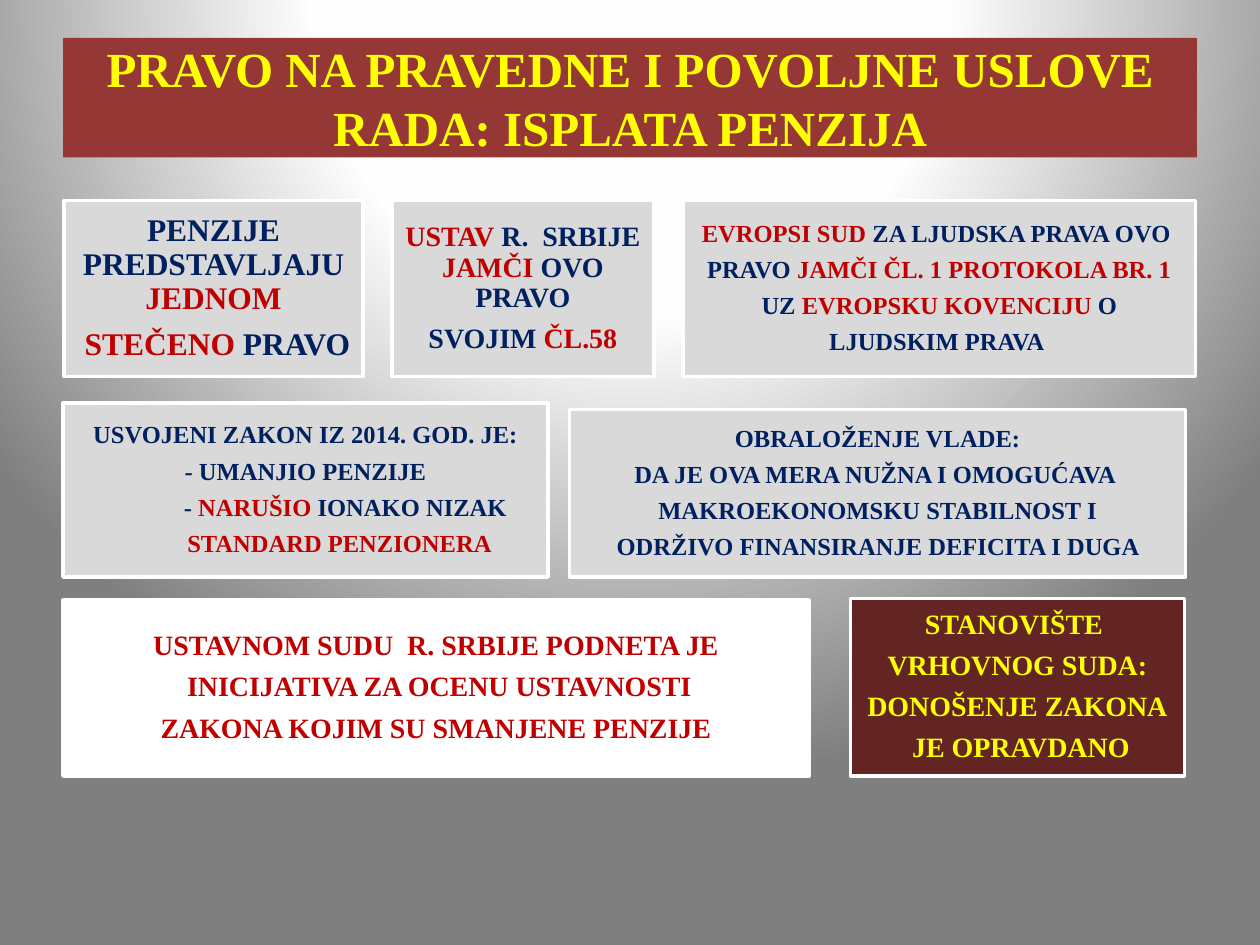
from lxml import etree
from pptx import Presentation
from pptx.dml.color import RGBColor
from pptx.enum.shapes import MSO_SHAPE as Shape
from pptx.enum.text import MSO_ANCHOR as Anchor, MSO_AUTO_SIZE as Fit, PP_ALIGN as Align
from pptx.oxml.ns import qn
from pptx.util import Inches, Pt

NAVY, RED, YELLOW, WHITE, GREY = "002060", "C00000", "FFFF00", "FFFFFF", "D9D9D9"


def paint(fmt, color):
    """Give a fill a solid colour."""
    fmt.solid()
    fmt.fore_color.rgb = RGBColor.from_string(color)


def style(run, size, color):
    run.font.name = "Times New Roman"
    run.font.size = Pt(size)
    run.font.bold = True
    paint(run.font.fill, color)


prs = Presentation()
prs.slide_width, prs.slide_height = Inches(10), Inches(7.5)
slide = prs.slides.add_slide(prs.slide_layouts[5])

# Background: circular gradient centred above the slide
back = slide.background.fill
back.gradient()
grad = slide.element.find(".//" + qn("p:bgPr")).find(qn("a:gradFill"))
for part in list(grad):
    grad.remove(part)
stops = etree.SubElement(grad, qn("a:gsLst"))
for pos, color in [(0, WHITE), (40, "FEFEFE"), (100, "7F7F7F")]:
    stop = etree.SubElement(stops, qn("a:gs"), pos=str(pos * 1000))
    etree.SubElement(stop, qn("a:srgbClr"), val=color)
ring = etree.SubElement(grad, qn("a:path"), path="circle")
etree.SubElement(ring, qn("a:fillToRect"), l="50000", t="-80000", r="50000", b="180000")

# Title
title = slide.shapes.title
title.left, title.top = Inches(0.5), Inches(0.3)
title.width, title.height = Inches(9), Inches(0.95)
paint(title.fill, "953735")
frame = title.text_frame
frame.text = "PRAVO NA PRAVEDNE I POVOLJNE USLOVE RADA: ISPLATA PENZIJA"
frame.auto_size = Fit.NONE
frame.vertical_anchor = Anchor.MIDDLE
frame.paragraphs[0].alignment = Align.CENTER
style(frame.paragraphs[0].runs[0], 28, YELLOW)

# Boxes: place, fill, text size, text colour, lines; *...* marks red words,
# and a (line, indent) pair moves a line to the right
boxes = [
    ((0.51, 1.59, 2.37, 1.4), GREY, 18, NAVY,
     ["PENZIJE PREDSTAVLJAJU *JEDNOM*", " *STEČENO* PRAVO"]),
    ((3.11, 1.59, 2.08, 1.4), GREY, 16, NAVY,
     ["*USTAV* R.  SRBIJE *JAMČI* OVO PRAVO", "SVOJIM *ČL.58*"]),
    ((5.42, 1.59, 4.07, 1.4), GREY, 14, NAVY,
     ["*EVROPSI SUD* ZA LJUDSKA PRAVA OVO ",
      "PRAVO *JAMČI ČL. 1 PROTOKOLA BR. 1*",
      "UZ *EVROPSKU KOVENCIJU* O", "LJUDSKIM PRAVA "]),
    ((0.5, 3.2, 3.85, 1.38), GREY, 14, NAVY,
     ["USVOJENI ZAKON IZ 2014. GOD. JE:", "- UMANJIO PENZIJE",
      ("- *NARUŠIO* IONAKO NIZAK", 0.63), ("*STANDARD PENZIONERA*", 0.54)]),
    ((4.52, 3.25, 4.89, 1.33), GREY, 14, NAVY,
     ["OBRALOŽENJE VLADE:", "DA JE OVA MERA NUŽNA I OMOGUĆAVA ",
      "MAKROEKONOMSKU STABILNOST I", " ODRŽIVO FINANSIRANJE DEFICITA I DUGA "]),
    ((0.5, 4.76, 5.92, 1.4), WHITE, 16, RED,
     ["USTAVNOM SUDU  R. SRBIJE PODNETA JE", " INICIJATIVA ZA OCENU USTAVNOSTI",
      "ZAKONA KOJIM SU SMANJENE PENZIJE"]),
    ((6.75, 4.75, 2.65, 1.41), "632523", 16, YELLOW,
     ["STANOVIŠTE ", "VRHOVNOG SUDA:", "DONOŠENJE ZAKONA", " JE OPRAVDANO"]),
]
for place, fill, size, color, lines in boxes:
    box = slide.shapes.add_shape(Shape.RECTANGLE, *map(Inches, place))
    box.shadow.inherit = False
    paint(box.fill, fill)
    paint(box.line.fill, WHITE)
    box.line.width = Pt(2)
    frame = box.text_frame
    frame.word_wrap = True
    frame.vertical_anchor = Anchor.MIDDLE
    inset = Inches(0.06 if size == 14 else 0.07)
    frame.margin_left = frame.margin_right = inset
    frame.margin_top = frame.margin_bottom = inset
    for i, line in enumerate(lines):
        text, indent = line if isinstance(line, tuple) else (line, 0)
        para = frame.add_paragraph() if i else frame.paragraphs[0]
        para.alignment = Align.CENTER
        para.line_spacing = 0.9
        para.space_after = Pt(round(size * 0.39, 1))
        if indent:
            para._p.get_or_add_pPr().set("marL", str(Inches(indent)))
        for j, words in enumerate(text.split("*")):
            if words:
                run = para.add_run()
                run.text = words
                style(run, size, RED if j % 2 else color)

prs.save("out.pptx")
